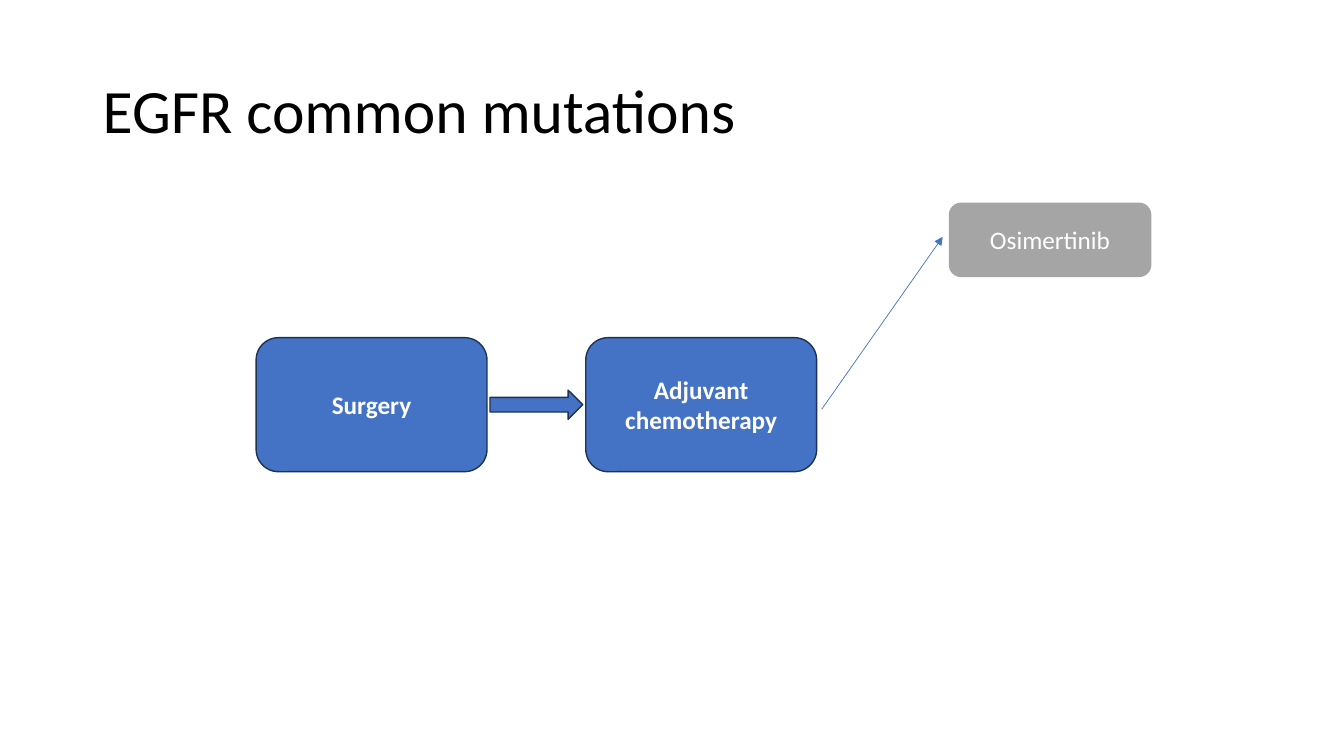
from lxml import etree
from pptx import Presentation
from pptx.dml.color import RGBColor
from pptx.enum.shapes import MSO_CONNECTOR, MSO_SHAPE
from pptx.enum.text import MSO_ANCHOR, PP_ALIGN
from pptx.oxml.ns import qn
from pptx.util import Pt

ROUNDED = MSO_SHAPE.ROUNDED_RECTANGLE
RIGHT_ARROW = MSO_SHAPE.RIGHT_ARROW
STRAIGHT = MSO_CONNECTOR.STRAIGHT
MIDDLE = MSO_ANCHOR.MIDDLE
LEFT, CENTER = PP_ALIGN.LEFT, PP_ALIGN.CENTER

EMU_PER_PX = 9144  # 100 px to the inch
BLUE, NAVY, GREY = "4472C4", "1E3256", "A5A5A5"
WHITE, BLACK = "FFFFFF", "000000"


def px(*values):
    return [v * EMU_PER_PX for v in values]


def rgb(value):
    return RGBColor.from_string(value)


def write(sp, text, color, size=18, bold=False, align=CENTER, spacing=1.0):
    tf = sp.text_frame
    tf.word_wrap = True
    tf.vertical_anchor = MIDDLE
    p = tf.paragraphs[0]
    p.alignment = align
    p.line_spacing = spacing
    r = p.add_run()
    r.text = text
    font_format = {"name": "Calibri", "size": Pt(size), "bold": bold}
    for name, value in font_format.items():
        setattr(r.font, name, value)
    r.font.color.rgb = rgb(color)


def add_title(s, text, box):
    sp = s.shapes.add_textbox(*px(*box))
    write(sp, text, BLACK, size=44, align=LEFT, spacing=0.9)


def add_block(s, kind, box, fill, line=None):
    sp = s.shapes.add_shape(kind, *px(*box))
    sp.shadow.inherit = False
    sp.fill.solid()
    sp.fill.fore_color.rgb = rgb(fill)
    if line:
        sp.line.color.rgb = rgb(line)
        sp.line.width = Pt(1)
    else:
        sp.line.fill.background()
    return sp


def add_thin_arrow(s, start, end):
    cxn = s.shapes.add_connector(STRAIGHT, *px(*start, *end))
    cxn.line.color.rgb = rgb(BLUE)
    cxn.line.width = Pt(0.5)
    ln = cxn.line._get_or_add_ln()
    etree.SubElement(ln, qn("a:tailEnd"), type="triangle")
    etree.SubElement(cxn._element.spPr, qn("a:effectLst"))


def main():
    prs = Presentation()
    prs.slide_width, prs.slide_height = px(1333, 750)
    s = prs.slides.add_slide(prs.slide_layouts[6])

    add_title(s, "EGFR common mutations", (92, 40, 1150, 145))

    # Treatment steps
    for i, step in enumerate(("Surgery", "Adjuvant chemotherapy")):
        sp = add_block(s, ROUNDED, (254 + i * 327, 335, 229, 133), BLUE, NAVY)
        write(sp, step, WHITE, bold=True)
    add_block(s, RIGHT_ARROW, (486, 387, 92, 29), BLUE, NAVY)

    # Drug that follows chemotherapy
    sp = add_block(s, ROUNDED, (941, 201, 201, 74), GREY)
    write(sp, "Osimertinib", WHITE)
    add_thin_arrow(s, (815, 406), (935, 235))

    prs.save("out.pptx")


if __name__ == "__main__":
    main()
